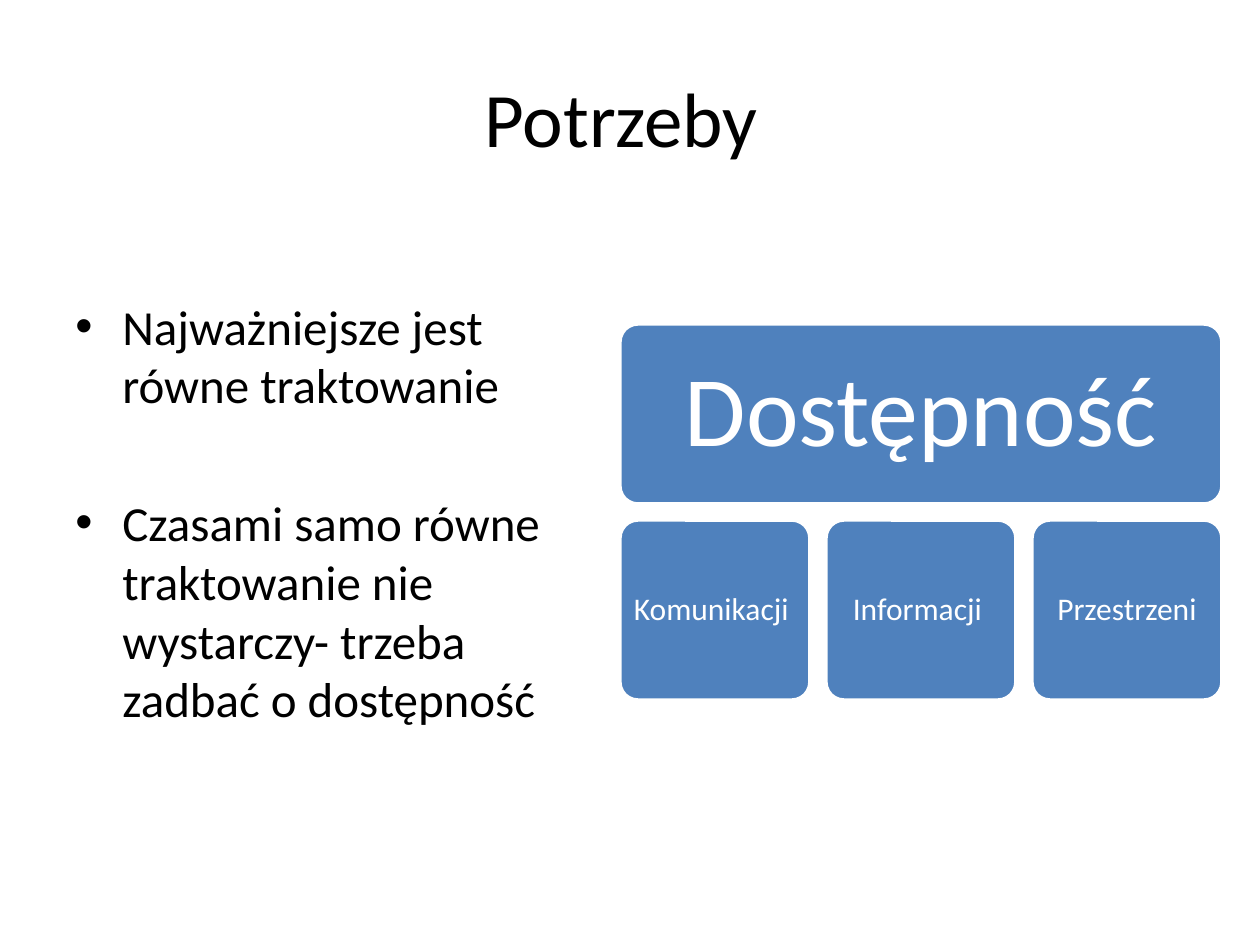
from dataclasses import dataclass

from lxml.etree import SubElement
from pptx import Presentation
from pptx.dml.color import RGBColor as Rgb
from pptx.enum.shapes import MSO_SHAPE as Shape
from pptx.enum.text import MSO_ANCHOR as Anchor, PP_ALIGN as Align
from pptx.oxml.ns import qn
from pptx.util import Emu, Pt


@dataclass(frozen=True)
class Theme:
    """Colours, font and type sizes of the slide."""
    font: str = "Calibri"
    ink: Rgb = Rgb(0, 0, 0)
    paper: Rgb = Rgb(255, 255, 255)
    blue: Rgb = Rgb(0x4F, 0x81, 0xBD)
    title: int = 44
    body: int = 28
    head: int = 57
    label: int = 18


THEME = Theme()
NEEDS = ["Komunikacji ", "Informacji ", "Przestrzeni"]
POINTS = [
    "Najważniejsze jest równe traktowanie",
    "Czasami samo równe traktowanie nie wystarczy- trzeba zadbać o dostępność",
]


def px(n):
    """Turn px into EMU."""
    return Emu(n * 914400 // 126)


def style(para, size, color, align):
    """Format a paragraph and its runs."""
    para.alignment = align
    for run in para.runs:
        run.font.name = THEME.font
        run.font.size = Pt(size)
        run.font.color.rgb = color


def bullet(para, indent):
    """Give a paragraph a hanging bullet."""
    props = para._p.get_or_add_pPr()
    props.set("marL", str(indent))
    props.set("indent", str(-indent))
    SubElement(props, qn("a:buFont")).set("typeface", "Arial")
    SubElement(props, qn("a:buChar")).set("char", "•")


def add_title(slide, text):
    """Add the centred title."""
    frame = slide.shapes.add_textbox(px(63), px(38), px(1134), px(157)).text_frame
    frame.word_wrap = True
    frame.vertical_anchor = Anchor.MIDDLE
    frame.text = text
    style(frame.paragraphs[0], THEME.title, THEME.ink, Align.CENTER)


def add_list(slide, items):
    """Add the bulleted points."""
    frame = slide.shapes.add_textbox(px(63), px(220), px(557), px(624)).text_frame
    frame.word_wrap = True
    frame.margin_top = px(76)
    frame.text = "\n".join(items)
    for i, para in enumerate(frame.paragraphs):
        style(para, THEME.body, THEME.ink, Align.LEFT)
        para.space_before = Pt(45 if i else 0)
        bullet(para, px(47))


def add_card(slide, text, left, top, width, height, size, inset):
    """Add one rounded card with a centred label."""
    card = slide.shapes.add_shape(
        Shape.ROUNDED_RECTANGLE, px(left), px(top), px(width), px(height))
    card.adjustments[0] = 0.1
    card.shadow.inherit = False
    card.fill.solid()
    card.fill.fore_color.rgb = THEME.blue
    card.line.color.rgb = THEME.paper
    card.line.width = Pt(2)
    frame = card.text_frame
    frame.word_wrap = True
    frame.vertical_anchor = Anchor.MIDDLE
    frame.margin_left = frame.margin_right = px(inset)
    frame.margin_top = frame.margin_bottom = px(inset)
    frame.text = text
    para = frame.paragraphs[0]
    para.line_spacing = 0.9
    style(para, size, THEME.paper, Align.CENTER)


def add_tree(slide, head, needs):
    """Add the wide card and the row of equal cards below it."""
    left, top, width, height, gap = 620, 324, 602, 180, 16
    add_card(slide, head, left, top, width, height, THEME.head, 25)
    cell = (width - gap * (len(needs) - 1)) // len(needs)
    for i, need in enumerate(needs):
        add_card(slide, need, left + i * (cell + gap), top + height + gap,
                 cell, height, THEME.label, 4)


def main():
    """Build and save the slide."""
    deck = Presentation()
    deck.slide_width, deck.slide_height = px(1260), px(945)
    slide = deck.slides.add_slide(deck.slide_layouts[6])
    add_title(slide, "Potrzeby ")
    add_list(slide, POINTS)
    add_tree(slide, "Dostępność", NEEDS)
    deck.save("out.pptx")


if __name__ == "__main__":
    main()
